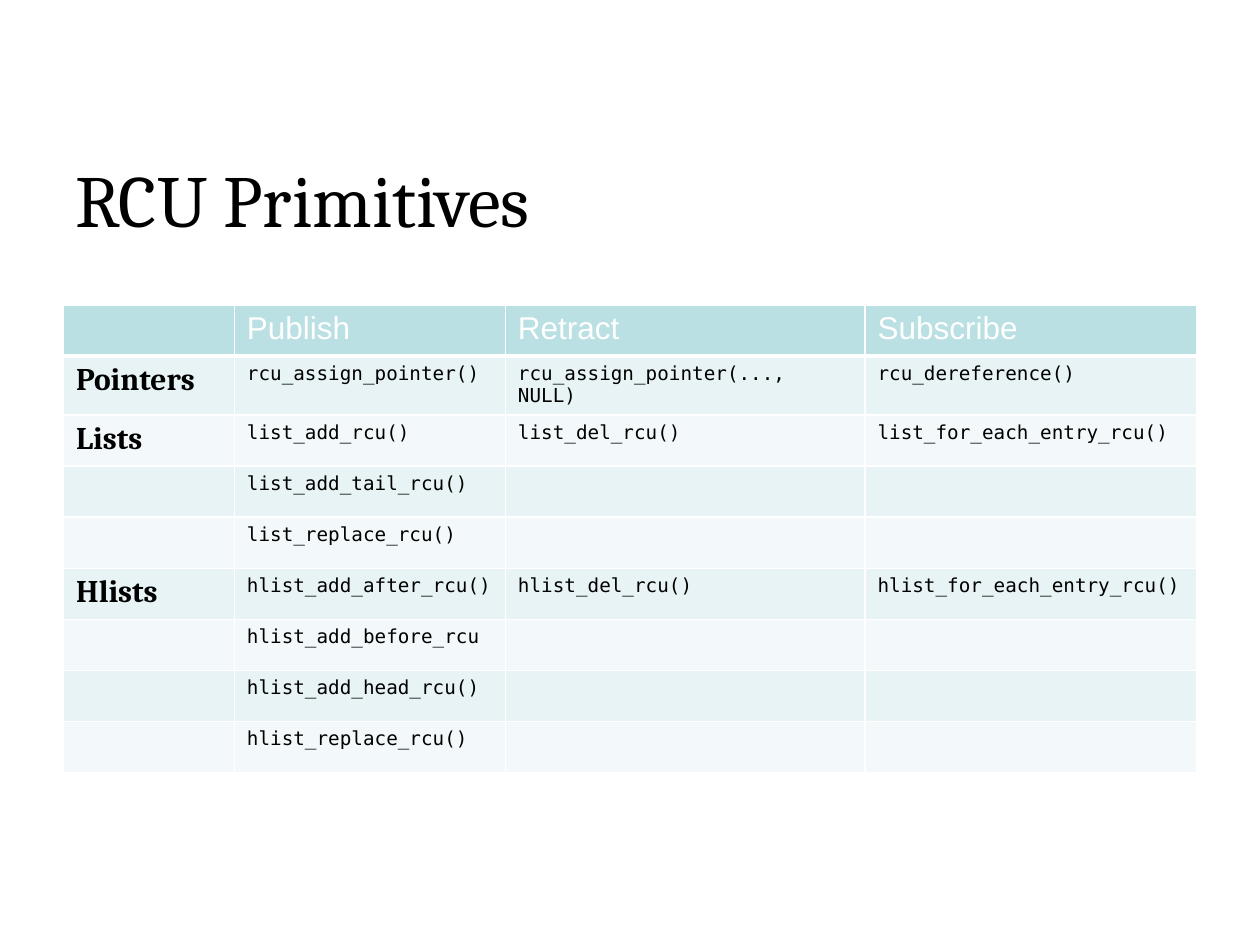
from dataclasses import dataclass

from lxml.etree import SubElement
from pptx import Presentation
from pptx.dml.color import RGBColor as RGB
from pptx.enum.text import MSO_ANCHOR as Anchor, MSO_AUTO_SIZE as AutoSize
from pptx.oxml.ns import qn
from pptx.util import Pt


@dataclass(frozen=True)
class Theme:
    ink: str = "000000"
    white: str = "FFFFFF"
    header_fill: str = "BBE0E3"
    band_fills: tuple = ("E7F3F4", "F3F9FA")
    serif: str = "Cambria"
    sans: str = "Arial"
    mono: str = "DejaVu Sans Mono"
    title_size: float = 42
    label_size: float = 18
    code_size: float = 11


class SlideBuilder:
    def __init__(self, deck, theme):
        self.theme = theme
        self.slide = deck.slides.add_slide(deck.slide_layouts[6])

    def add_text(self, paragraph, text, font, size, color, bold=False):
        run = paragraph.add_run()
        run.text = text
        for key, value in {"name": font, "size": Pt(size), "bold": bold}.items():
            setattr(run.font, key, value)
        run.font.color.rgb = RGB.from_string(color)

    def title(self, text, left, top, width, height):
        t = self.theme
        frame = self.slide.shapes.add_textbox(
            Pt(left), Pt(top), Pt(width), Pt(height)).text_frame
        layout = {"word_wrap": True, "vertical_anchor": Anchor.MIDDLE,
                  "auto_size": AutoSize.SHAPE_TO_FIT_TEXT}
        for key, value in layout.items():
            setattr(frame, key, value)
        heading = frame.paragraphs[0]
        heading.line_spacing = 0.9
        self.add_text(heading, text, t.serif, t.title_size, t.ink)

    def borders(self, cell, bottom):
        properties = cell._tc.get_or_add_tcPr()
        for side, width in {"L": 1, "R": 1, "T": 1, "B": bottom}.items():
            line = SubElement(properties, qn(f"a:ln{side}"), w=str(Pt(width)))
            fill = SubElement(line, qn("a:solidFill"))
            SubElement(fill, qn("a:srgbClr"), val=self.theme.white)

    def cell_style(self, row, column):
        t = self.theme
        if row == 0:
            return t.sans, t.label_size, t.white, False
        if column == 0:
            return t.serif, t.label_size, t.ink, True
        return t.mono, t.code_size, t.ink, False

    def table(self, rows, left, top, column_widths, row_height):
        t = self.theme
        grid = self.slide.shapes.add_table(
            len(rows), len(column_widths), Pt(left), Pt(top),
            Pt(sum(column_widths)), Pt(row_height * len(rows))).table
        for column, width in zip(grid.columns, column_widths):
            column.width = Pt(width)
        for r, texts in enumerate(rows):
            grid.rows[r].height = Pt(row_height)
            for c, text in enumerate(texts):
                cell = grid.cell(r, c)
                self.borders(cell, bottom=1 if r else 3)
                cell.fill.solid()
                color = t.band_fills[(r - 1) % 2] if r else t.header_fill
                cell.fill.fore_color.rgb = RGB.from_string(color)
                if text:
                    self.add_text(cell.text_frame.paragraphs[0], text,
                                  *self.cell_style(r, c))


PRIMITIVES = [
    ("", "Publish", "Retract", "Subscribe"),
    ("Pointers", "rcu_assign_pointer()", "rcu_assign_pointer(..., NULL)",
     "rcu_dereference()"),
    ("Lists", "list_add_rcu()", "list_del_rcu()", "list_for_each_entry_rcu()"),
    ("", "list_add_tail_rcu()", "", ""),
    ("", "list_replace_rcu()", "", ""),
    ("Hlists", "hlist_add_after_rcu()", "hlist_del_rcu()",
     "hlist_for_each_entry_rcu()"),
    ("", "hlist_add_before_rcu", "", ""),
    ("", "hlist_add_head_rcu()", "", ""),
    ("", "hlist_replace_rcu()", "", ""),
]


def main():
    deck = Presentation()
    deck.slide_width, deck.slide_height = Pt(720), Pt(540)
    builder = SlideBuilder(deck, Theme())

    # Heading
    builder.title("RCU Primitives", 36, 90, 570, 52.5)

    # Primitives by data structure
    builder.table(PRIMITIVES, 36.3, 174.3, (97.6, 154.9, 205.5, 189.3), 29.2)

    deck.save("out.pptx")


if __name__ == "__main__":
    main()
